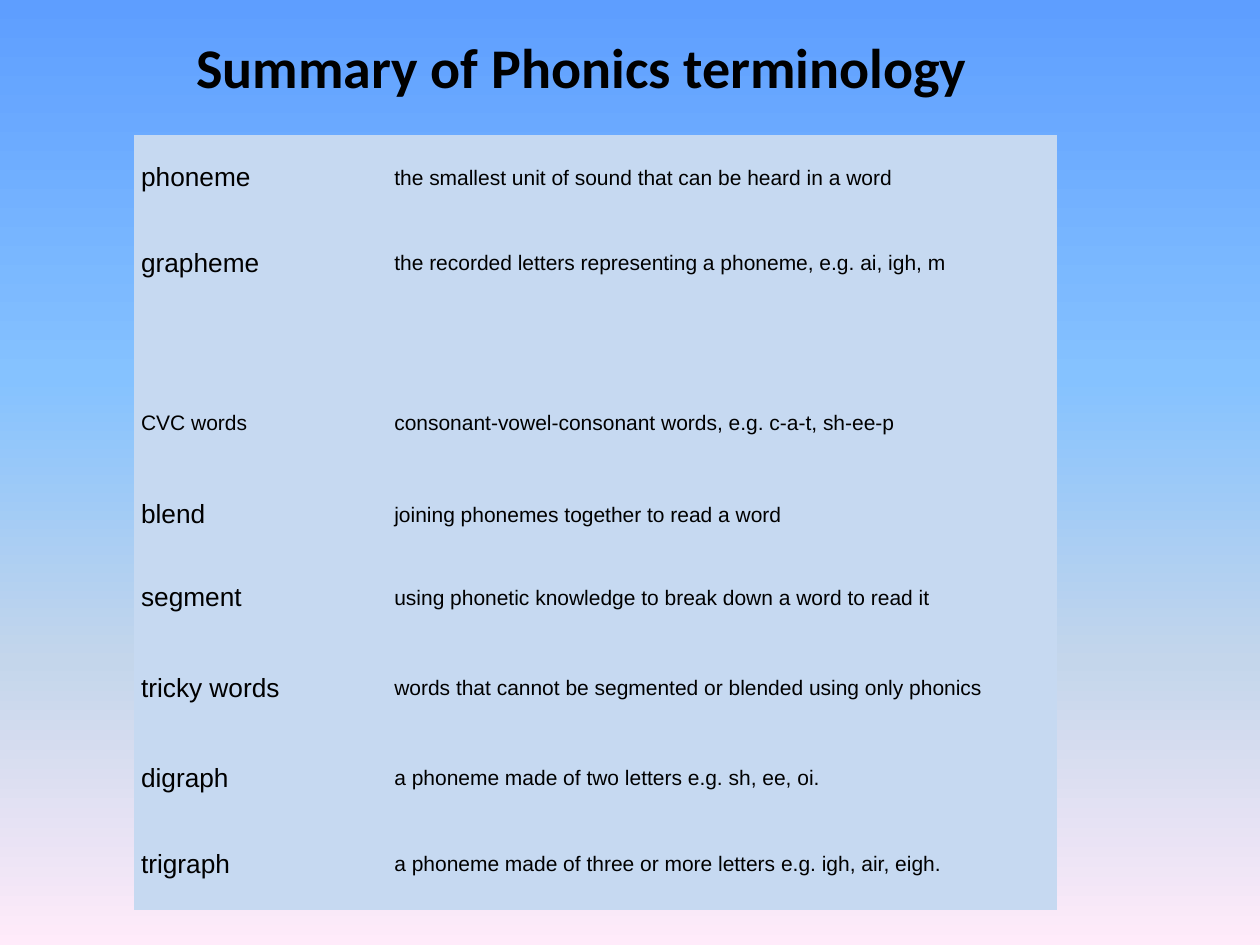
from copy import deepcopy

from pptx import Presentation
from pptx.dml.color import RGBColor as RGB
from pptx.enum.text import MSO_ANCHOR as Anchor
from pptx.util import Inches, Pt

BLACK = RGB(0x00, 0x00, 0x00)
PALE_BLUE = RGB(0xC6, 0xD9, 0xF1)
SKY = [
    (0, RGB(0x5E, 0x9E, 0xFF)),
    (0.4, RGB(0x85, 0xC2, 0xFF)),
    (0.7, RGB(0xC4, 0xD6, 0xEB)),
    (1, RGB(0xFF, 0xEB, 0xFA)),
]
NO_STYLE = "{2D5ABB26-0587-4C30-8999-92F81FD0307C}"

TITLE_FONT = {"name": "Calibri", "size": Pt(32), "bold": True}
TERM_FONT = {"name": "Arial", "size": Pt(15)}
BODY_FONT = {"name": "Arial", "size": Pt(12)}
CELL = {
    "vertical_anchor": Anchor.MIDDLE,
    "margin_left": Inches(0.06),
    "margin_right": Inches(0.06),
    "margin_top": Inches(0.03),
    "margin_bottom": Inches(0.03),
}
RAISED_CELL = {**CELL, "margin_bottom": Inches(0.19)}

COLUMNS = [2.01, 5.32]
ROWS = [
    (0.68, "phoneme", "the smallest unit of sound that can be heard in a word"),
    (0.68, "grapheme", "the recorded letters representing a phoneme, e.g. ai, igh, m"),
    (0.68, "", ""),
    (0.65, "CVC words", "consonant-vowel-consonant words, e.g. c-a-t, sh-ee-p"),
    (0.65, "blend", "joining phonemes together to read a word"),
    (0.67, "segment", "using phonetic knowledge to break down a word to read it"),
    (0.77, "tricky words", "words that cannot be segmented or blended using only phonics"),
    (0.65, "digraph", "a phoneme made of two letters e.g. sh, ee, oi."),
    (0.72, "trigraph", "a phoneme made of three or more letters e.g. igh, air, eigh."),
]


def set_all(obj, values):
    for name, value in values.items():
        setattr(obj, name, value)


def write(tf, text, font):
    r = tf.paragraphs[0].add_run()
    r.text = text
    set_all(r.font, font)
    r.font.color.rgb = BLACK


def paint_background(s):
    fill = s.background.fill
    fill.gradient()
    fill.gradient_angle = 270
    gs_list = s.element.xpath(".//a:gsLst")[0]
    for _ in range(len(SKY) - len(gs_list)):
        gs_list.append(deepcopy(gs_list[0]))
    for stop, (position, color) in zip(fill.gradient_stops, SKY):
        stop.position = position
        stop.color.rgb = color


def add_title(s, text, left, top, width, height):
    sp = s.shapes.add_textbox(*map(Inches, (left, top, width, height)))
    tf = sp.text_frame
    tf.word_wrap = True
    write(tf, text, TITLE_FONT)


def fill_cell(cell, text, font, layout):
    set_all(cell, layout)
    cell.fill.solid()
    cell.fill.fore_color.rgb = PALE_BLUE
    if text:
        write(cell.text_frame, text, font)


def add_glossary(s, left, top):
    width, height = sum(COLUMNS), sum(row[0] for row in ROWS)
    frame = s.shapes.add_table(
        len(ROWS), len(COLUMNS), *map(Inches, (left, top, width, height))
    )
    table = frame.table
    set_all(table, {"first_row": False, "horz_banding": False})
    frame.element.xpath(".//a:tableStyleId")[0].text = NO_STYLE
    for column, column_width in zip(table.columns, COLUMNS):
        column.width = Inches(column_width)
    for row, (row_height, term, meaning) in zip(table.rows, ROWS):
        row.height = Inches(row_height)
        is_cvc = term == "CVC words"
        layout = RAISED_CELL if is_cvc else CELL
        fill_cell(row.cells[0], term, BODY_FONT if is_cvc else TERM_FONT, layout)
        fill_cell(row.cells[1], meaning, BODY_FONT, layout)


def main():
    prs = Presentation()
    set_all(prs, {"slide_width": Inches(10), "slide_height": Inches(7.5)})
    s = prs.slides.add_slide(prs.slide_layouts[6])
    paint_background(s)
    add_glossary(s, 1.06, 1.07)
    add_title(s, "Summary of Phonics terminology", 1.46, 0.21, 6.85, 0.64)
    prs.save("out.pptx")


if __name__ == "__main__":
    main()
